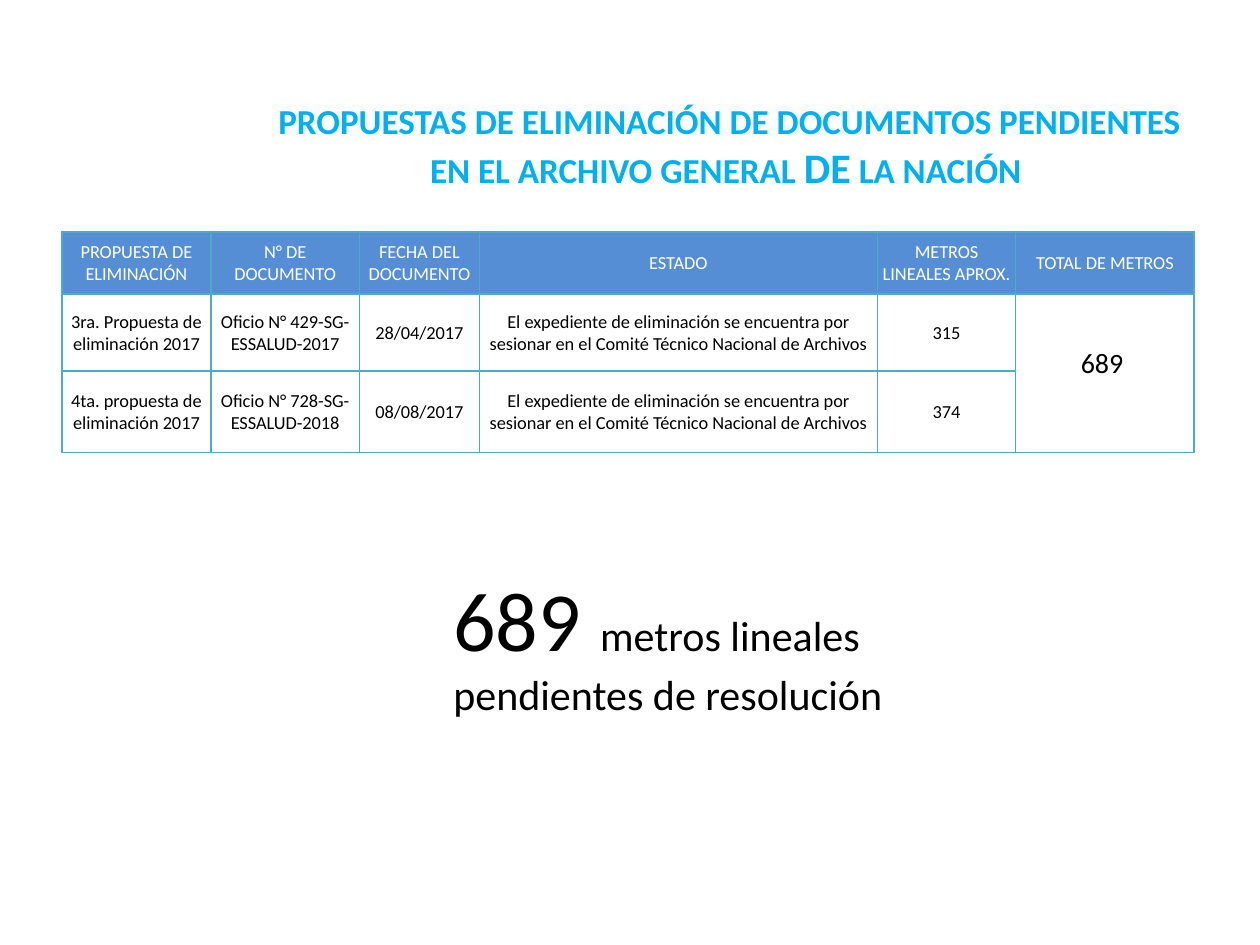
from lxml import etree
from pptx import Presentation
from pptx.dml.color import RGBColor
from pptx.enum import text
from pptx.oxml import ns
from pptx.util import Pt

# Content
TITLE = [
    ("PROPUESTAS DE ELIMINACIÓN DE DOCUMENTOS PENDIENTES EN EL ARCHIVO GENERAL ", 20),
    ("DE", 24),
    (" LA NACIÓN ", 20),
]
SUMMARY = [("689 ", 48), ("metros lineales pendientes de resolución", 24)]
STATUS = ("El expediente de eliminación se encuentra por sesionar "
          "en el Comité Técnico Nacional de Archivos")
ROWS = [
    ["PROPUESTA DE ELIMINACIÓN", "N° DE DOCUMENTO", "FECHA DEL DOCUMENTO",
     "ESTADO", "METROS LINEALES APROX.", "TOTAL DE METROS"],
    ["3ra. Propuesta de eliminación 2017", "Oficio N° 429-SG-ESSALUD-2017",
     "28/04/2017", STATUS, "315", "689"],
    ["4ta. propuesta de eliminación 2017", "Oficio N° 728-SG-ESSALUD-2018",
     "08/08/2017", STATUS, "374", ""],
]
COLUMN_WIDTHS = [85, 85, 68.5, 227.5, 79, 102]
ROW_HEIGHTS = [35.5, 44, 46.5]

FONT = "Calibri"
SKY, BLUE, TEAL = "00B0F0", "558ED5", "4BACC6"
WHITE, BLACK = "FFFFFF", "000000"


def paint(target, color):
    """Give a font or a fill a solid colour."""
    if hasattr(target, "solid"):
        target.solid()
        target.fore_color.rgb = RGBColor.from_string(color)
    else:
        target.color.rgb = RGBColor.from_string(color)


def write_runs(paragraph, runs, color, bold=False):
    paragraph.font.name = FONT
    paragraph.font.bold = bold
    paint(paragraph.font, color)
    for words, size in runs:
        run = paragraph.add_run()
        run.text = words
        run.font.size = Pt(size)


def add_borders(cell, color, width):
    properties = cell._tc.get_or_add_tcPr()
    for index, side in enumerate(("a:lnL", "a:lnR", "a:lnT", "a:lnB")):
        line = etree.Element(ns.qn(side), w=str(Pt(width)))
        fill = etree.SubElement(line, ns.qn("a:solidFill"))
        etree.SubElement(fill, ns.qn("a:srgbClr"), val=color)
        properties.insert(index, line)


presentation = Presentation()
presentation.slide_width, presentation.slide_height = Pt(720), Pt(540)
slide = presentation.slides.add_slide(presentation.slide_layouts[5])

# Title
title = slide.shapes.title
title.left, title.top, title.width, title.height = Pt(150.5), Pt(54.7), Pt(533), Pt(57)
title.text_frame.vertical_anchor = text.MSO_ANCHOR.MIDDLE
title.text_frame.auto_size = text.MSO_AUTO_SIZE.NONE
heading = title.text_frame.paragraphs[0]
heading.alignment = text.PP_ALIGN.CENTER
write_runs(heading, TITLE, SKY, bold=True)

# Summary
summary = slide.shapes.add_textbox(Pt(252), Pt(321), Pt(294.5), Pt(94.5))
summary.text_frame.word_wrap = True
summary.text_frame.auto_size = text.MSO_AUTO_SIZE.SHAPE_TO_FIT_TEXT
write_runs(summary.text_frame.paragraphs[0], SUMMARY, BLACK)

# Table of proposals
table = slide.shapes.add_table(
    len(ROWS), len(COLUMN_WIDTHS), Pt(35.5), Pt(132.5),
    Pt(sum(COLUMN_WIDTHS)), Pt(sum(ROW_HEIGHTS))).table
table.horz_banding = False
for column, width in zip(table.columns, COLUMN_WIDTHS):
    column.width = Pt(width)
for row, height in zip(table.rows, ROW_HEIGHTS):
    row.height = Pt(height)

for row_index, values in enumerate(ROWS):
    is_header = row_index == 0
    for column_index, value in enumerate(values):
        cell = table.cell(row_index, column_index)
        cell.vertical_anchor = text.MSO_ANCHOR.MIDDLE
        cell.margin_left = cell.margin_right = cell.margin_top = Pt(0.7)
        cell.margin_bottom = Pt(0)
        if is_header:
            paint(cell.fill, BLUE)
        else:
            cell.fill.background()
        add_borders(cell, TEAL, 1)
        paragraph = cell.text_frame.paragraphs[0]
        paragraph.alignment = text.PP_ALIGN.CENTER
        if value:
            is_total = value == "689"
            write_runs(paragraph, [(value, 16 if is_total else 10.5)],
                       WHITE if is_header else BLACK)

# Total spans both proposals and sits slightly above the middle
total = table.cell(1, 5)
total.merge(table.cell(2, 5))
total.margin_bottom, total.margin_right = Pt(11), Pt(4)

presentation.save("out.pptx")
